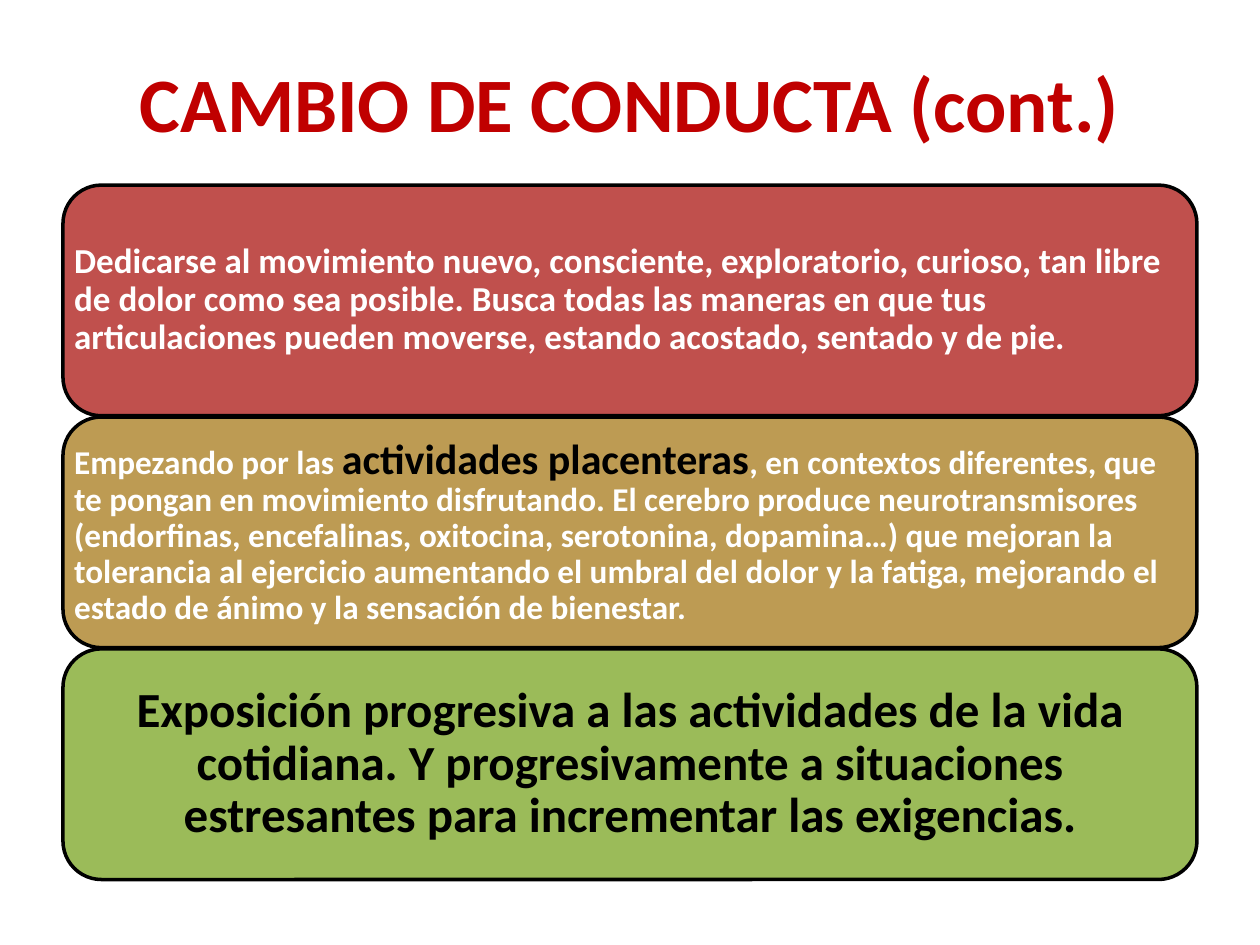
import pptx
import pptx.util
import pptx.dml.color
import pptx.enum.shapes
import pptx.enum.text

Pt = pptx.util.Pt
Align = pptx.enum.text.PP_ALIGN
Anchor = pptx.enum.text.MSO_ANCHOR
Shape = pptx.enum.shapes.MSO_SHAPE


def color(code):
    return pptx.dml.color.RGBColor.from_string(code)


class Page:
    face = "Calibri"
    left = 36
    width = 648

    def __init__(self, slide):
        self.slide = slide

    def label(self, shape, runs, align, inset, lead):
        frame = shape.text_frame
        frame.word_wrap = True
        frame.vertical_anchor = Anchor.MIDDLE
        frame.margin_left = frame.margin_right = Pt(inset)
        frame.margin_top = frame.margin_bottom = Pt(inset)
        line = frame.paragraphs[0]
        line.alignment = align
        line.line_spacing = lead
        line.font.name = self.face
        line.font.bold = True
        for text, size, ink in runs:
            run = line.add_run()
            run.text = text
            run.font.size = Pt(size)
            run.font.color.rgb = color(ink)

    def title(self, text, top, height):
        box = self.slide.shapes.add_textbox(
            Pt(self.left), Pt(top), Pt(self.width), Pt(height))
        self.label(box, [(text, 44, "C00000")], Align.CENTER, 3.6, 1.0)

    def panel(self, top, height, fill, runs, align, inset):
        box = self.slide.shapes.add_shape(
            Shape.ROUNDED_RECTANGLE,
            Pt(self.left), Pt(top), Pt(self.width), Pt(height))
        box.shadow.inherit = False
        box.fill.solid()
        box.fill.fore_color.rgb = color(fill)
        box.line.color.rgb = color("000000")
        box.line.width = Pt(2)
        self.label(box, runs, align, inset, 0.9)


def main():
    deck = pptx.Presentation()
    deck.slide_width = Pt(720)
    deck.slide_height = Pt(540)
    page = Page(deck.slides.add_slide(deck.slide_layouts[6]))
    page.title("CAMBIO DE CONDUCTA (cont.)", 21.6, 72.7)

    white, black = "FFFFFF", "000000"
    panels = [
        ("C0504D", Align.LEFT, 0, [
            ("Dedicarse al movimiento nuevo, consciente, exploratorio, "
             "curioso, tan libre de dolor como sea posible. Busca todas las "
             "maneras en que tus articulaciones pueden moverse, estando "
             "acostado, sentado y de pie.", 20, white)]),
        ("BD9B53", Align.LEFT, 0, [
            ("Empezando por las ", 19, white),
            ("actividades placenteras", 24, black),
            (", en contextos diferentes, que te pongan en movimiento "
             "disfrutando. El cerebro produce neurotransmisores (endorfinas, "
             "encefalinas, oxitocina, serotonina, dopamina…) que mejoran la "
             "tolerancia al ejercicio aumentando el umbral del dolor y la "
             "fatiga, mejorando el estado de ánimo y la sensación de "
             "bienestar.", 19, white)]),
        ("9BBB59", Align.CENTER, 2, [
            ("Exposición progresiva a las actividades de la vida cotidiana. "
             "Y progresivamente a situaciones estresantes para incrementar "
             "las exigencias.", 28, black)]),
    ]
    for row, (fill, align, inset, runs) in enumerate(panels):
        page.panel(105.8 + row * 132.5, 131.8, fill, runs, align, inset)

    deck.save("out.pptx")


if __name__ == "__main__":
    main()
